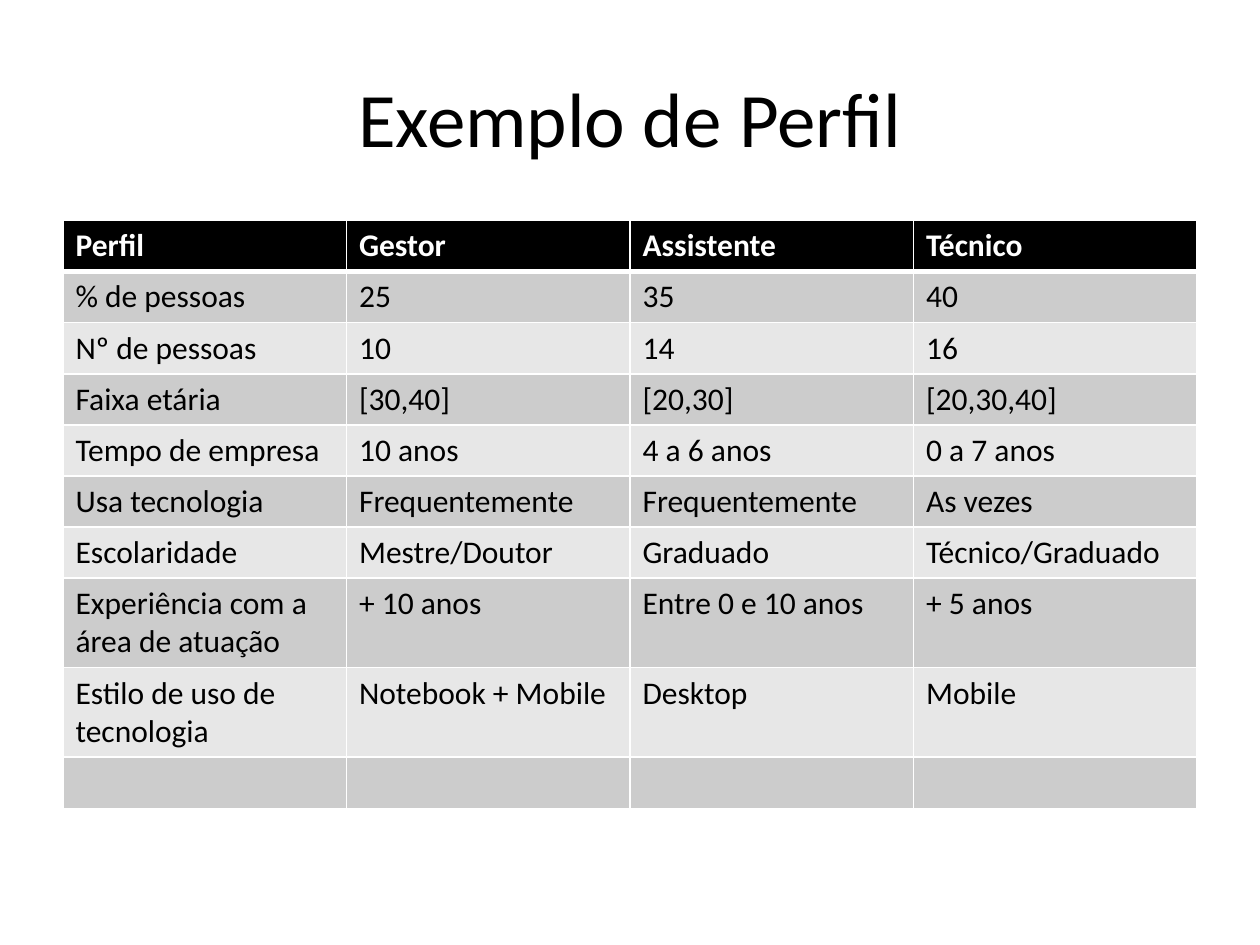
from dataclasses import dataclass

from lxml.etree import SubElement as Sub
from pptx import Presentation
from pptx.dml.color import RGBColor
from pptx.enum.text import MSO_ANCHOR as Anchor, PP_ALIGN as Align
from pptx.oxml.ns import qn
from pptx.util import Pt

PX = 4572  # EMU per px, 200 px to the inch
FONT = "Calibri"
COLORS = {
    "ink": "000000",
    "paper": "FFFFFF",
    "dark": "CCCCCC",
    "light": "E7E7E7",
}


@dataclass
class Box:
    left: int
    top: int
    width: int
    height: int

    def emu(self) -> list[int]:
        return [n * PX for n in (self.left, self.top, self.width, self.height)]


@dataclass
class Look:
    fill: str
    text: str
    bold: bool
    top: int
    base: int


HEAD = Look("ink", "paper", True, 1, 3)
ROWS = [
    ("Perfil", "Gestor", "Assistente", "Técnico"),
    ("% de pessoas", "25", "35", "40"),
    ("Nº de pessoas", "10", "14", "16"),
    ("Faixa etária", "[30,40]", "[20,30]", "[20,30,40]"),
    ("Tempo de empresa", "10 anos", "4 a 6 anos", "0 a 7 anos"),
    ("Usa tecnologia", "Frequentemente", "Frequentemente", "As vezes"),
    ("Escolaridade", "Mestre/Doutor", "Graduado", "Técnico/Graduado"),
    ("Experiência com a área de atuação", "+ 10 anos", "Entre 0 e 10 anos", "+ 5 anos"),
    ("Estilo de uso de tecnologia", "Notebook + Mobile", "Desktop", "Mobile"),
    ("", "", "", ""),
]
ROW_H = 81


def rgb(name: str) -> RGBColor:
    return RGBColor.from_string(COLORS[name])


def style(font, size: int, color: str, bold: bool = False) -> None:
    font.name, font.size, font.bold = FONT, Pt(size), bold
    font.color.rgb = rgb(color)


def row_look(row: int) -> Look:
    if row == 0:
        return HEAD
    fill = "dark" if row % 2 else "light"
    return Look(fill, "ink", False, 3 if row == 1 else 1, 1)


def add_edges(cell, look: Look) -> None:
    props = cell._tc.get_or_add_tcPr()
    edges = {"lnL": 1, "lnR": 1, "lnT": look.top, "lnB": look.base}
    for place, (tag, width) in enumerate(edges.items()):
        line = Sub(props, qn(f"a:{tag}"), w=str(Pt(width)))
        Sub(Sub(line, qn("a:solidFill")), qn("a:srgbClr"), val=COLORS["paper"])
        props.insert(place, line)  # edges come before the fill


def draw_cell(cell, text: str, look: Look) -> None:
    cell.fill.solid()
    cell.fill.fore_color.rgb = rgb(look.fill)
    add_edges(cell, look)
    para = cell.text_frame.paragraphs[0]
    para.text = text
    style(para.font, 18, look.text, look.bold)
    for run in para.runs:
        style(run.font, 18, look.text, look.bold)


def draw_title(slide, text: str, box: Box) -> None:
    title = slide.shapes.title
    title.left, title.top, title.width, title.height = box.emu()
    frame = title.text_frame
    frame.text = text
    frame.vertical_anchor = Anchor.MIDDLE
    para = frame.paragraphs[0]
    para.alignment = Align.CENTER
    style(para.runs[0].font, 44, "ink")


def draw_table(slide, rows: list[tuple], box: Box) -> None:
    table = slide.shapes.add_table(len(rows), len(rows[0]), *box.emu()).table
    for r, texts in enumerate(rows):
        table.rows[r].height = ROW_H * PX
        for c, text in enumerate(texts):
            draw_cell(table.cell(r, c), text, row_look(r))


def main() -> None:
    deck = Presentation()
    deck.slide_width, deck.slide_height = 2000 * PX, 1500 * PX
    slide = deck.slides.add_slide(deck.slide_layouts[5])
    slide.background.fill.solid()
    slide.background.fill.fore_color.rgb = rgb("paper")

    # Title above the profile table
    draw_title(slide, "Exemplo de Perfil", Box(100, 60, 1800, 250))
    draw_table(slide, ROWS, Box(100, 350, 1800, ROW_H * len(ROWS)))
    deck.save("out.pptx")


if __name__ == "__main__":
    main()
